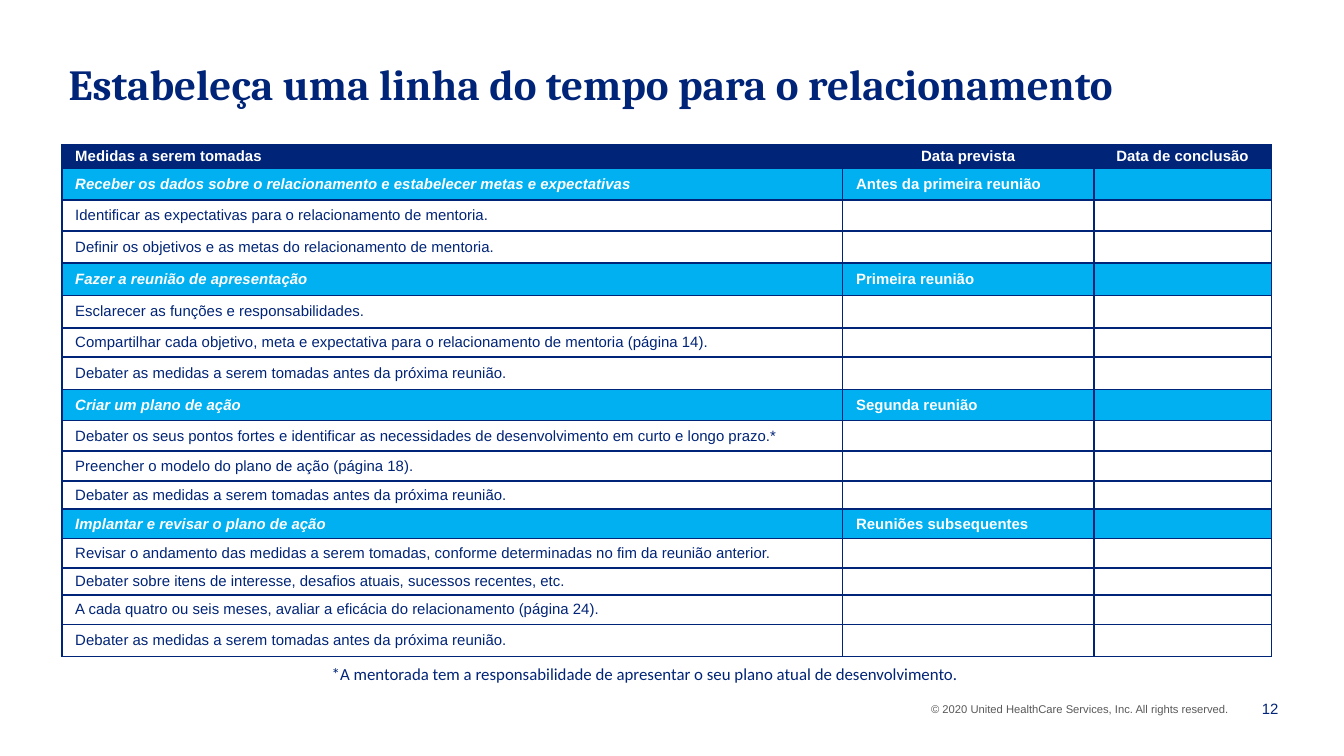
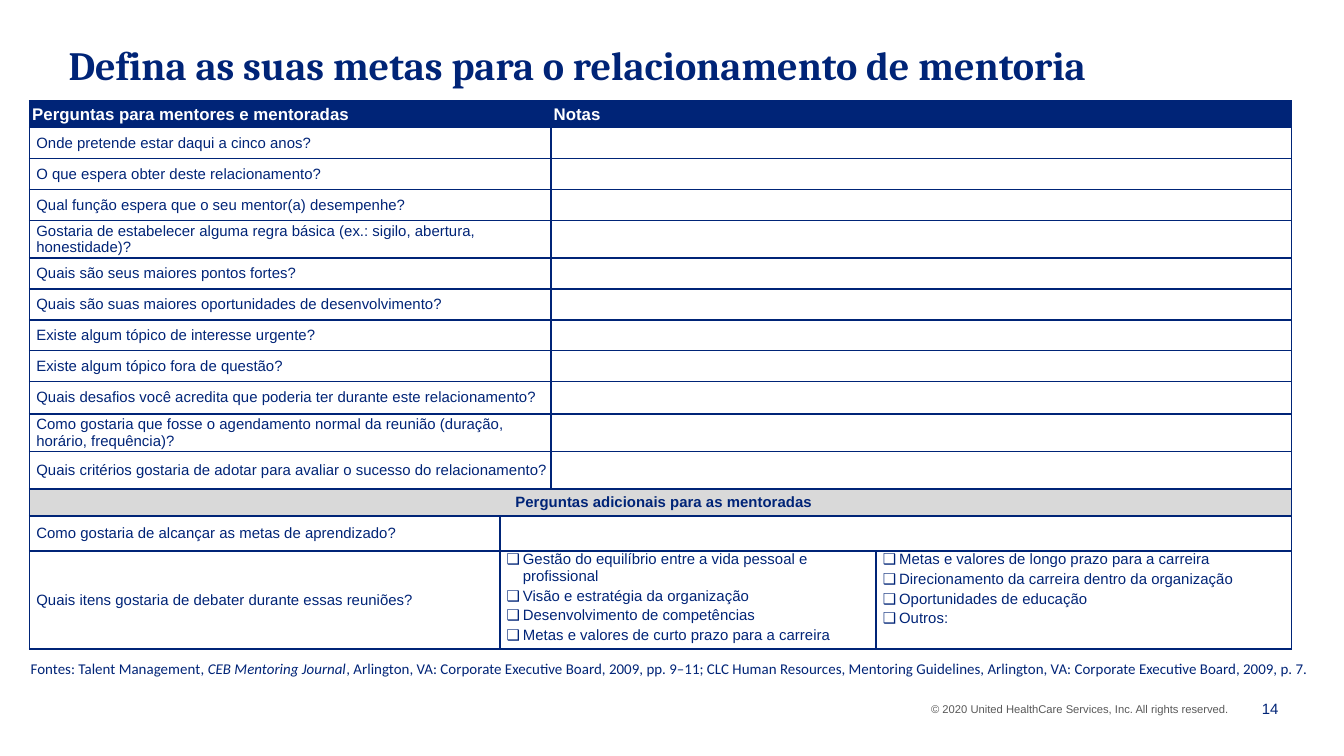
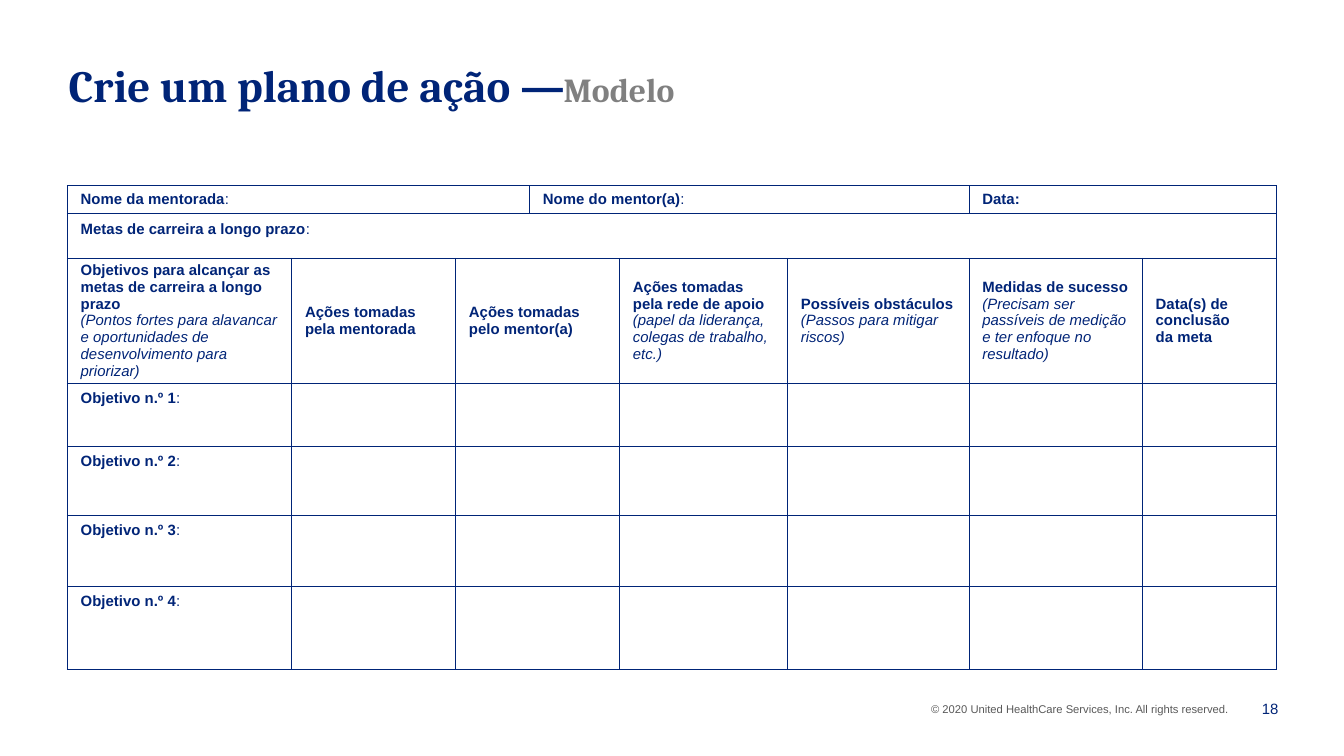
from dataclasses import dataclass, replace
from typing import NamedTuple

from lxml import etree
from pptx import Presentation
from pptx.dml.color import RGBColor
from pptx.enum.text import MSO_ANCHOR, MSO_AUTO_SIZE, PP_ALIGN
from pptx.oxml.ns import qn
from pptx.util import Emu, Inches, Pt

LEFT, CENTER, RIGHT = PP_ALIGN.LEFT, PP_ALIGN.CENTER, PP_ALIGN.RIGHT
TOP, MIDDLE = MSO_ANCHOR.TOP, MSO_ANCHOR.MIDDLE
NO_FIT = MSO_AUTO_SIZE.NONE

NAVY, SKY, SILVER, WHITE = "002477", "00B0F0", "D9D9D9", "FFFFFF"
SLATE, GRAY = "595959", "808080"
GRID_COLS, GRID_ROWS = 1000, 562.5
SLIDE_W = Inches(10)
SLIDE_H = Emu(SLIDE_W * 9 // 16)
SIDES = (10, 0, 10, 0)
PADDED = (10, 5, 10, 5)
HEADER = (2, 2, 2, 2)
QUESTION = (5, 0, 0, 0)
COPYRIGHT = "© 2020 United HealthCare Services, Inc. All rights reserved."


class Box(NamedTuple):
    col: int
    row: int
    cols: int
    rows: int


@dataclass(frozen=True)
class Run:
    text: str
    bold: bool = False
    italic: bool = False
    size: float = 8
    color: str = NAVY
    font: str = "Arial"


@dataclass(frozen=True)
class Para:
    runs: tuple[Run, ...]
    align: int = LEFT
    hang: int = 0
    bullet: str = ""
    before: float = 0


@dataclass(frozen=True)
class Cell:
    paras: tuple[Para, ...] = ()
    span: int = 1
    fill: str = ""
    inset: tuple[int, int, int, int] = SIDES
    anchor: int = MIDDLE


def across(n: float) -> Emu:
    return Emu(round(SLIDE_W * n / GRID_COLS))


def down(n: float) -> Emu:
    return Emu(round(SLIDE_H * n / GRID_ROWS))


def place(box: Box) -> tuple[Emu, Emu, Emu, Emu]:
    return across(box.col), down(box.row), across(box.cols), down(box.rows)


def rgb(color: str) -> RGBColor:
    return RGBColor.from_string(color)


def para(*runs: Run, **kw) -> Para:
    return Para(runs, **kw)


def plain(text: str, **kw) -> Cell:
    return Cell((para(Run(text)),), **kw)


def bold(text: str, color: str = NAVY, align: int = LEFT, size: float = 8,
         italic: bool = False, **kw) -> Cell:
    return Cell((para(Run(text, True, italic, size, color), align=align),), **kw)


def field(label: str, **kw) -> Cell:
    return Cell((para(Run(label, True), Run(":")),), **kw)


def write(tf, paras: tuple[Para, ...]) -> None:
    for i, item in enumerate(paras):
        p = tf.paragraphs[0] if i == 0 else tf.add_paragraph()
        p.alignment = item.align
        if item.hang:
            pPr = p._p.get_or_add_pPr()
            pPr.set("marL", str(across(item.hang)))
            pPr.set("indent", str(-across(item.hang)))
            if item.bullet:
                etree.SubElement(pPr, qn("a:buFont"), typeface="Arial")
                etree.SubElement(pPr, qn("a:buChar"), char=item.bullet)
        if i and item.before:
            p.space_before = Pt(item.before)
        for run in item.runs:
            for n, line in enumerate(run.text.split("\n")):
                if n:
                    p.add_line_break()
                r = p.add_run()
                r.text = line
                r.font.name, r.font.size = run.font, Pt(run.size)
                r.font.bold, r.font.italic = run.bold, run.italic
                r.font.color.rgb = rgb(run.color)


def set_insets(target, inset: tuple[int, int, int, int]) -> None:
    target.margin_left, target.margin_right = across(inset[0]), across(inset[2])
    target.margin_top, target.margin_bottom = down(inset[1]), down(inset[3])


def add_text(s, box: Box, item: Para, inset=PADDED, anchor: int = TOP) -> None:
    tf = s.shapes.add_textbox(*place(box)).text_frame
    tf.word_wrap = True
    tf.vertical_anchor = anchor
    set_insets(tf, inset)
    write(tf, (item,))


def set_borders(cell, width: float) -> None:
    tcPr = cell._tc.get_or_add_tcPr()
    for side in ("lnL", "lnR", "lnT", "lnB"):
        ln = etree.SubElement(tcPr, qn(f"a:{side}"), w=str(Pt(width)))
        fill = etree.SubElement(ln, qn("a:solidFill"))
        etree.SubElement(fill, qn("a:srgbClr"), val=NAVY)


def draw_cell(cell, spec: Cell, border: float) -> None:
    set_borders(cell, border)
    if spec.fill:
        cell.fill.solid()
        cell.fill.fore_color.rgb = rgb(spec.fill)
    else:
        cell.fill.background()
    set_insets(cell, spec.inset)
    cell.vertical_anchor = spec.anchor
    if spec.paras:
        write(cell.text_frame, spec.paras)
    else:
        p = cell.text_frame.paragraphs[0]
        etree.SubElement(p._p, qn("a:endParaRPr"), sz="800")


def add_grid(s, box: Box, widths: list[int], heights: list[int],
             rows: list[list[Cell]], border: float) -> None:
    frame = s.shapes.add_table(len(heights), len(widths), *place(box))
    table = frame.table
    table.first_row = table.horz_banding = False
    for column, width in zip(table.columns, widths):
        column.width = across(width)
    for line, height in zip(table.rows, heights):
        line.height = down(height)
    frame.width, frame.height = across(box.cols), down(box.rows)
    for i, specs in enumerate(rows):
        j = 0
        for spec in specs:
            draw_cell(table.cell(i, j), spec, border)
            for k in range(j + 1, j + spec.span):
                draw_cell(table.cell(i, k), replace(spec, paras=()), border)
            if spec.span > 1:
                table.cell(i, j).merge(table.cell(i, j + spec.span - 1))
            j += spec.span


def title_run(text: str, size: float, color: str = NAVY) -> Run:
    return Run(text, True, False, size, color, "Cambria")


def add_page(prs, number: int, box: Box, *runs: Run):
    s = prs.slides.add_slide(prs.slide_layouts[5])
    title = s.shapes.title
    title.left, title.top, title.width, title.height = place(box)
    tf = title.text_frame
    tf.word_wrap, tf.auto_size, tf.vertical_anchor = True, NO_FIT, TOP
    set_insets(tf, PADDED)
    write(tf, (para(*runs),))
    add_text(s, Box(683, 518, 258, 20), para(Run(COPYRIGHT, size=6, color=SLATE)))
    add_text(s, Box(922, 512, 39, 31), para(Run(str(number)), align=RIGHT),
             anchor=MIDDLE)
    return s


STAGES = [
    ("Receber os dados sobre o relacionamento e estabelecer metas e expectativas",
     "Antes da primeira reunião", [
         "Identificar as expectativas para o relacionamento de mentoria.",
         "Definir os objetivos e as metas do relacionamento de mentoria."]),
    ("Fazer a reunião de apresentação", "Primeira reunião", [
        "Esclarecer as funções e responsabilidades.",
        "Compartilhar cada objetivo, meta e expectativa para o relacionamento "
        "de mentoria (página 14).",
        "Debater as medidas a serem tomadas antes da próxima reunião."]),
    ("Criar um plano de ação", "Segunda reunião", [
        "Debater os seus pontos fortes e identificar as necessidades de "
        "desenvolvimento em curto e longo prazo.*",
        "Preencher o modelo do plano de ação (página 18).",
        "Debater as medidas a serem tomadas antes da próxima reunião."]),
    ("Implantar e revisar o plano de ação", "Reuniões subsequentes", [
        "Revisar o andamento das medidas a serem tomadas, conforme determinadas "
        "no fim da reunião anterior.",
        "Debater sobre itens de interesse, desafios atuais, sucessos recentes, etc.",
        "A cada quatro ou seis meses, avaliar a eficácia do relacionamento (página 24).",
        "Debater as medidas a serem tomadas antes da próxima reunião."]),
]

QUESTIONS = [
    "Onde pretende estar daqui a cinco anos?",
    "O que espera obter deste relacionamento?",
    "Qual função espera que o seu mentor(a) desempenhe?",
    "Gostaria de estabelecer alguma regra básica (ex.: sigilo, abertura, honestidade)?",
    "Quais são seus maiores pontos fortes?",
    "Quais são suas maiores oportunidades de desenvolvimento?",
    "Existe algum tópico de interesse urgente?",
    "Existe algum tópico fora de questão?",
    "Quais desafios você acredita que poderia ter durante este relacionamento?",
    "Como gostaria que fosse o agendamento normal da reunião (duração, horário, "
    "frequência)?",
    "Quais critérios gostaria de adotar para avaliar o sucesso do relacionamento?",
]

TOPICS_NEAR = [
    "Gestão do equilíbrio entre a vida pessoal e profissional",
    "Visão e estratégia da organização",
    "Desenvolvimento de competências",
    "Metas e valores de curto prazo para a carreira",
]
TOPICS_FAR = [
    "Metas e valores de longo prazo para a carreira",
    "Direcionamento da carreira dentro da organização",
    "Oportunidades de educação",
    "Outros:",
]


def build_timeline(prs) -> None:
    s = add_page(prs, 12, Box(41, 38, 926, 60), title_run(
        "Estabeleça uma linha do tempo para o relacionamento", 23))
    rows = [[bold("Medidas a serem tomadas", WHITE, fill=NAVY),
             bold("Data prevista", WHITE, CENTER, fill=NAVY),
             bold("Data de conclusão", WHITE, CENTER, fill=NAVY)]]
    for stage, meeting, steps in STAGES:
        rows.append([bold(stage, WHITE, italic=True, fill=SKY),
                     bold(meeting, WHITE, fill=SKY), Cell(fill=SKY)])
        rows += [[plain(step), Cell(), Cell()] for step in steps]
    heights = [17, 24, 23, 24, 24, 24, 22, 24, 23, 23, 22, 21, 22, 22, 20, 22, 24]
    add_grid(s, Box(46, 108, 900, 379), [581, 187, 132], heights, rows, 1)
    note = Run("*A mentorada tem a responsabilidade de apresentar o seu plano "
               "atual de desenvolvimento.", size=9, font="Calibri")
    add_text(s, Box(237, 494, 833, 15), para(note, hang=13), SIDES)


def checklist(topics: list[str], span: int = 1) -> Cell:
    paras = tuple(para(Run(t), hang=12, bullet="❑", before=1.6) for t in topics)
    return Cell(paras, span, inset=QUESTION, anchor=TOP)


def build_goals(prs) -> None:
    s = add_page(prs, 14, Box(41, 25, 909, 60), title_run(
        "Defina as suas metas para o relacionamento de mentoria", 21.5))
    rows = [[bold(label, WHITE, size=9, span=2, fill=NAVY, inset=HEADER)
             for label in ("Perguntas para mentores e mentoradas", "Notas")]]
    rows += [[plain(q, span=2, inset=QUESTION), Cell(span=2)] for q in QUESTIONS]
    rows += [
        [bold("Perguntas adicionais para as mentoradas", align=CENTER, span=4,
              fill=SILVER, inset=QUESTION)],
        [plain("Como gostaria de alcançar as metas de aprendizado?",
               inset=QUESTION), Cell(span=3)],
        [plain("Quais itens gostaria de debater durante essas reuniões?",
               inset=QUESTION), checklist(TOPICS_NEAR, 2), checklist(TOPICS_FAR)],
    ]
    heights = [20, 23, 23, 23, 28, 23, 23, 23, 23, 24, 28, 28, 20, 26, 63]
    add_grid(s, Box(22, 75, 939, 410), [350, 38, 242, 309], heights, rows, 1)
    source = Run("Fontes: Talent Management", font="Calibri")
    add_text(s, Box(13, 491, 987, 13), para(
        source,
        replace(source, text=", CEB Mentoring Journal", italic=True),
        replace(source, text=", Arlington, VA: Corporate Executive Board, 2009, "
                "pp. 9–11; CLC Human Resources, Mentoring Guidelines, Arlington, "
                "VA: Corporate Executive Board, 2009, p. 7.")), SIDES)


def heading(label: str, hint: str) -> Cell:
    return Cell((para(Run(label, True)), para(Run(hint, italic=True))))


def build_plan(prs) -> None:
    s = add_page(prs, 18, Box(41, 38, 794, 60),
                 title_run("Crie um plano de ação ― ", 24),
                 title_run("Modelo", 18, GRAY))
    support = para(Run("Ações tomadas pela rede de apoio ", True),
                   Run("(papel da liderança, colegas de trabalho, etc.)", italic=True))
    rows = [
        [field("Nome da mentorada", span=3), field("Nome do mentor(a)", span=3),
         bold("Data:", span=2)],
        [field("Metas de carreira a longo prazo", span=8, inset=PADDED, anchor=TOP)],
        [heading("Objetivos para alcançar as metas de carreira a longo prazo",
                 "(Pontos fortes para alavancar e oportunidades de "
                 "desenvolvimento para priorizar)"),
         bold("Ações tomadas pela mentorada"),
         bold("Ações tomadas pelo mentor(a)", span=2),
         Cell((support,)),
         heading("Possíveis obstáculos", "(Passos para mitigar riscos)"),
         heading("Medidas de sucesso", "(Precisam ser passíveis de medição e "
                 "ter enfoque no resultado)"),
         bold("Data(s) de conclusão\nda meta")],
    ]
    for n in range(1, 5):
        rows.append([field(f"Objetivo n.º {n}", inset=PADDED, anchor=TOP),
                     Cell(), Cell(span=2), *[Cell()] * 4])
    add_grid(s, Box(50, 138, 900, 360), [167, 122, 55, 67, 125, 135, 129, 100],
             [21, 33, 75, 47, 51, 53, 62], rows, 0.25)


def main() -> None:
    prs = Presentation()
    prs.slide_width, prs.slide_height = SLIDE_W, SLIDE_H
    build_timeline(prs)
    build_goals(prs)
    build_plan(prs)
    prs.save("out.pptx")


if __name__ == "__main__":
    main()
